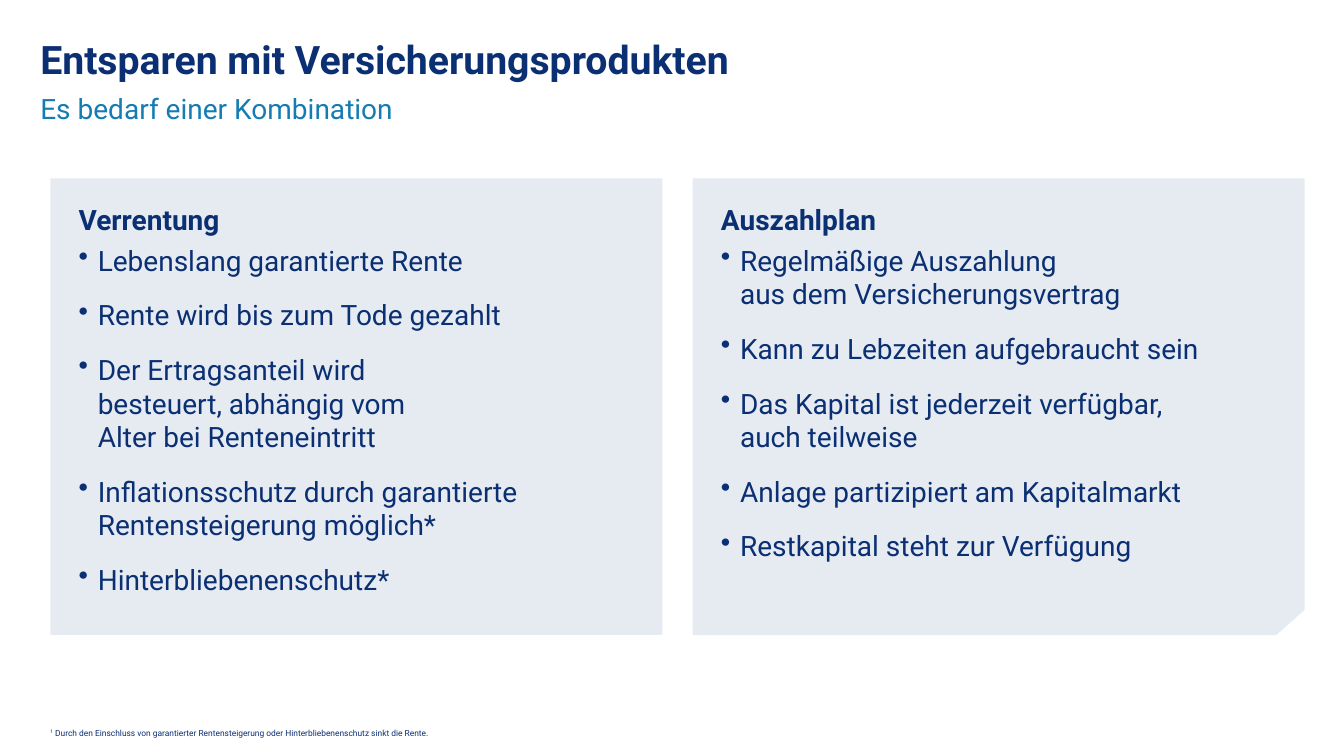
import pptx
import pptx.dml.color
import pptx.enum.shapes
import pptx.enum.text
import pptx.oxml.ns
import pptx.util
from lxml import etree
from pptx.util import Inches

FONT = "Roboto"
COLORS = {"navy": "0A2F73", "blue": "147CB3", "panel": "E6EAF1"}
PANEL_TOP, PANEL_W, PANEL_H = 1.77, 6.07, 4.53
CORNER_W, CORNER_H = 0.28, 0.25

ANNUITY = [
    "Lebenslang garantierte Rente",
    "Rente wird bis zum Tode gezahlt",
    "Der Ertragsanteil wird \nbesteuert, abhängig vom \nAlter bei Renteneintritt",
    "Inflationsschutz durch garantierte Rentensteigerung möglich*",
    "Hinterbliebenenschutz*",
]
PAYOUT_PLAN = [
    "Regelmäßige Auszahlung \naus dem Versicherungsvertrag",
    "Kann zu Lebzeiten aufgebraucht sein",
    "Das Kapital ist jederzeit verfügbar, \nauch teilweise",
    "Anlage partizipiert am Kapitalmarkt",
    "Restkapital steht zur Verfügung",
]


def rgb(name):
    return pptx.dml.color.RGBColor.from_string(COLORS[name])


def set_frame(tf, insets=(0, 0, 0, 0), anchor="TOP"):
    tf.word_wrap = True
    tf.vertical_anchor = getattr(pptx.enum.text.MSO_ANCHOR, anchor)
    tf.margin_left, tf.margin_top, tf.margin_right, tf.margin_bottom = map(Inches, insets)


def write(p, text, size=20, color="navy", bold=False, baseline=None):
    """Append text to a paragraph; newlines become line breaks."""
    for i, line in enumerate(text.split("\n")):
        if i:
            p.add_line_break()
        r = p.add_run()
        r.text = line
        r.font.name = FONT
        r.font.size = pptx.util.Pt(size)
        r.font.bold = bold
        r.font.color.rgb = rgb(color)
        if baseline:
            r.font._element.set("baseline", str(baseline))


def set_indent(p, hanging):
    pPr = p._p.get_or_add_pPr()
    pPr.set("marL", str(Inches(hanging)))
    pPr.set("indent", str(-Inches(hanging)))
    return pPr


def add_bullet(tf, text):
    p = tf.add_paragraph()
    p.level = 3
    pPr = set_indent(p, 0.19)
    etree.SubElement(pPr, pptx.oxml.ns.qn("a:buChar")).set("char", "•")
    p.alignment = pptx.enum.text.PP_ALIGN.LEFT
    p.space_before = pptx.util.Pt(5)
    p.space_after = pptx.util.Pt(10)
    write(p, text)


def add_text(s, box, insets=(0, 0, 0, 0), anchor="TOP", line_spacing=1.0):
    """Add a text box and return its first paragraph."""
    tf = s.shapes.add_textbox(*map(Inches, box)).text_frame
    set_frame(tf, insets, anchor)
    p = tf.paragraphs[0]
    p.line_spacing = line_spacing
    return p


def add_cut_panel(s, left):
    right, bottom = left + PANEL_W, PANEL_TOP + PANEL_H
    outline = [(right, PANEL_TOP), (right, bottom - CORNER_H),
               (right - CORNER_W, bottom), (left, bottom)]
    builder = s.shapes.build_freeform(Inches(left), Inches(PANEL_TOP))
    builder.add_line_segments([(Inches(x), Inches(y)) for x, y in outline], close=True)
    return builder.convert_to_shape()


def add_panel(s, left):
    return s.shapes.add_shape(pptx.enum.shapes.MSO_SHAPE.RECTANGLE, Inches(left),
                              Inches(PANEL_TOP), Inches(PANEL_W), Inches(PANEL_H))


def fill_panel(sp, heading, bullets, insets):
    sp.shadow.inherit = False
    sp.fill.solid()
    sp.fill.fore_color.rgb = rgb("panel")
    sp.line.fill.background()
    tf = sp.text_frame
    set_frame(tf, insets)
    p = tf.paragraphs[0]
    p.alignment = pptx.enum.text.PP_ALIGN.LEFT
    write(p, heading, bold=True)
    for text in bullets:
        add_bullet(tf, text)


def main():
    prs = pptx.Presentation()
    prs.slide_width, prs.slide_height = Inches(13.33), Inches(7.5)
    s = prs.slides.add_slide(prs.slide_layouts[6])

    # Title and subtitle
    p = add_text(s, (0.4, 0.4, 12.33, 0.45), line_spacing=0.9)
    write(p, "Entsparen mit Versicherungsprodukten", size=28, bold=True)
    p = add_text(s, (0.4, 0.91, 12.33, 0.43), insets=(0, 0, 0.2, 0))
    write(p, "Es bedarf einer Kombination", color="blue")

    # Comparison panels
    fill_panel(add_panel(s, 0.5), "Verrentung", ANNUITY, (0.28, 0.24, 0, 0))
    fill_panel(add_cut_panel(s, 6.87), "Auszahlplan", PAYOUT_PLAN, (0.28, 0.24, 0.1, 0.05))

    # Footnote
    p = add_text(s, (0.5, 7.22, 6.97, 0.1), anchor="BOTTOM", line_spacing=1.1)
    set_indent(p, 0.05)
    write(p, "1", size=6, baseline=30000)
    write(p, " Durch den Einschluss von garantierter Rentensteigerung oder "
             "Hinterbliebenenschutz sinkt die Rente.", size=6)

    prs.save("out.pptx")


if __name__ == "__main__":
    main()
